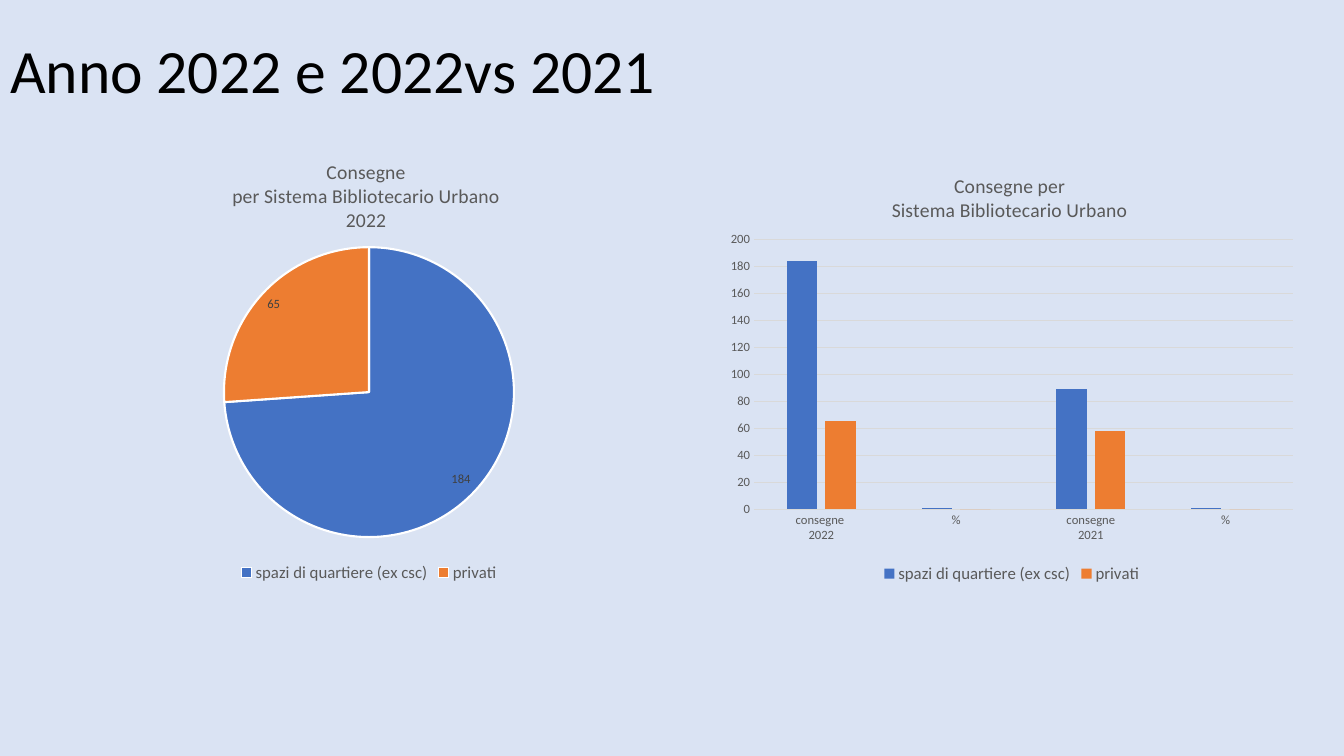
from lxml.etree import SubElement, Element
from pptx import Presentation
from pptx.chart.data import CategoryChartData
from pptx.dml.color import RGBColor
from pptx.enum.chart import XL_CHART_TYPE, XL_LABEL_POSITION, XL_LEGEND_POSITION, XL_TICK_MARK
from pptx.enum.text import MSO_ANCHOR, PP_ALIGN
from pptx.oxml.ns import qn
from pptx.util import Inches, Pt

# Content
HEAD = ["Anno 2022 e 2022vs 2021"]
KINDS = ["spazi di quartiere (ex csc)", "privati"]
PIE = {
    "type": XL_CHART_TYPE.PIE,
    "title": ["Consegne", "per Sistema Bibliotecario Urbano", "2022"],
    "cats": KINDS,
    "rows": {"Consegne 2022": [184, 65]},
    "box": (0.51, 1.36, 6.3, 4.46),
    "top": (0.28, 0.04),
    "plot": (0.27, 0.245, 0.46, 0.645),
}
BARS = {
    "type": XL_CHART_TYPE.COLUMN_CLUSTERED,
    "title": ["Consegne per", "Sistema Bibliotecario Urbano"],
    "cats": ["consegne \n2022", "%", "consegne\n2021", "%"],
    "rows": dict(zip(KINDS, [[184, 1, 89, 1], [65, 0, 58, 0]])),
    "box": (7.13, 1.51, 5.81, 4.32),
    "top": (0.29, 0.04),
    "plot": (0.06, 0.2, 0.92, 0.62),
}
HUES = {"back": "DAE3F3", "ink": "000000", "text": "595959", "label": "404040",
        "grid": "D9D9D9", "edge": "FFFFFF"}
FILLS = ["4472C4", "ED7D31"]
FACE = "Calibri"


def rgb(code):
    return RGBColor.from_string(code)


def style(font, size, hue):
    font.name, font.size, font.bold = FACE, Pt(size), False
    font.color.rgb = rgb(HUES[hue])


def write(frame, lines, size=14, hue="text", align=PP_ALIGN.CENTER, space=None):
    for i, line in enumerate(lines):
        para = frame.paragraphs[0] if i == 0 else frame.add_paragraph()
        para.alignment, para.line_spacing = align, space
        run = para.add_run()
        run.text = line
        style(run.font, size, hue)


def place(node, at, spot, inner=False):
    """Set a manual layout, in shares of the chart's size."""
    for old in node.findall(qn("c:layout")):
        node.remove(old)
    layout = Element(qn("c:layout"))
    node.insert(spot, layout)
    manual = SubElement(layout, qn("c:manualLayout"))
    parts = [("layoutTarget", "inner")] if inner else []
    parts += [("xMode", "edge"), ("yMode", "edge")]
    parts += zip("xywh", at)
    for tag, val in parts:
        SubElement(manual, qn("c:" + tag)).set("val", str(val))


def paint(form, hue):
    form.fill.solid()
    form.fill.fore_color.rgb = rgb(hue)


def draw(slide, info):
    data = CategoryChartData()
    data.categories = info["cats"]
    for name, vals in info["rows"].items():
        data.add_series(name, vals)
    box = [Inches(n) for n in info["box"]]
    chart = slide.shapes.add_chart(info["type"], *box, data).chart
    style(chart.font, 10, "ink")
    chart.has_title = True
    write(chart.chart_title.text_frame, info["title"])
    chart.chart_title.include_in_layout = False
    area = chart.plots[0]._element.getparent()
    place(area, info["plot"], 0, inner=True)
    place(area.getparent().find(qn("c:title")), info["top"], 1)
    chart.has_legend = True
    chart.legend.position = XL_LEGEND_POSITION.BOTTOM
    chart.legend.include_in_layout = False
    style(chart.legend.font, 12, "text")
    return chart


# Slide and title
deck = Presentation()
deck.slide_width, deck.slide_height = Inches(13.33), Inches(7.5)
slide = deck.slides.add_slide(deck.slide_layouts[5])
paint(slide.background, HUES["back"])
title = slide.shapes.title
title.left, title.top, title.width, title.height = 0, 0, Inches(11.5), Inches(1.45)
title.text_frame.vertical_anchor = MSO_ANCHOR.MIDDLE
write(title.text_frame, HEAD, size=44, hue="ink", align=PP_ALIGN.LEFT, space=0.9)

# Pie for 2022
pie = draw(slide, PIE).plots[0]
pie.vary_by_categories = True
for i, fill in enumerate(FILLS):
    form = pie.series[0].points[i].format
    paint(form, fill)
    form.line.color.rgb = rgb(HUES["edge"])
    form.line.width = Pt(1.5)
pie.has_data_labels = True
tags = pie.data_labels
tags.show_value, tags.show_percentage = True, False
tags.position = XL_LABEL_POSITION.INSIDE_END
style(tags.font, 9, "label")

# Columns for both years
chart = draw(slide, BARS)
bars = chart.plots[0]
bars.vary_by_categories = False
bars.gap_width, bars.overlap = 219, -27
for row, fill in zip(bars.series, FILLS):
    paint(row.format, fill)
cat, val = chart.category_axis, chart.value_axis
for axis in (cat, val):
    axis.major_tick_mark = axis.minor_tick_mark = XL_TICK_MARK.NONE
    style(axis.tick_labels.font, 9, "text")
val.minimum_scale, val.maximum_scale, val.major_unit = 0, 200, 20
val.tick_labels.number_format = "0"
val.tick_labels.number_format_is_linked = False
val.format.line.fill.background()
val.has_major_gridlines = True
for line in (cat.format.line, val.major_gridlines.format.line):
    line.color.rgb = rgb(HUES["grid"])
    line.width = Pt(0.75)

deck.save("out.pptx")
